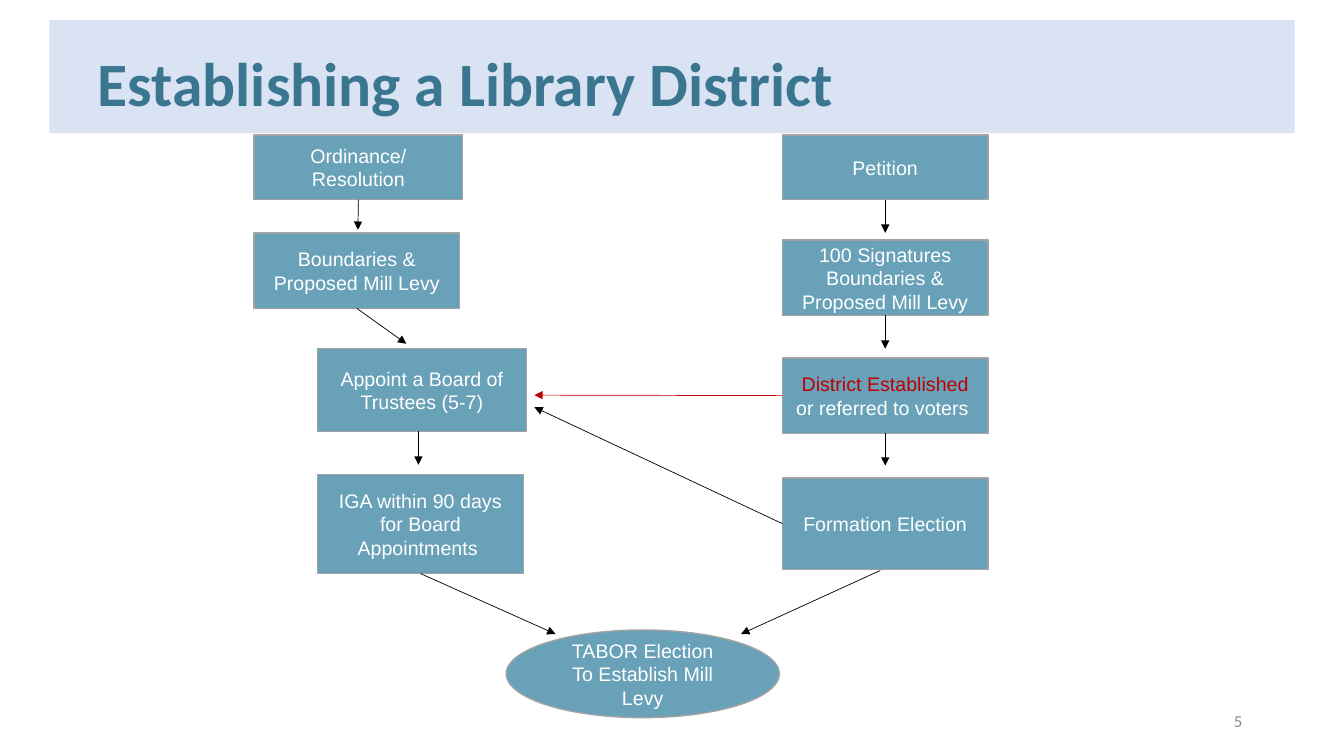
from lxml import etree
from pptx import Presentation
from pptx.dml.color import RGBColor
from pptx.enum.shapes import MSO_CONNECTOR, MSO_SHAPE
from pptx.enum.text import MSO_ANCHOR, MSO_AUTO_SIZE, PP_ALIGN
from pptx.oxml.ns import qn
from pptx.util import Pt

RECT, ELLIPSE = MSO_SHAPE.RECTANGLE, MSO_SHAPE.OVAL
STRAIGHT = MSO_CONNECTOR.STRAIGHT
LEFT, CENTER, RIGHT = PP_ALIGN.LEFT, PP_ALIGN.CENTER, PP_ALIGN.RIGHT
TOP, MIDDLE = MSO_ANCHOR.TOP, MSO_ANCHOR.MIDDLE
GROW = MSO_AUTO_SIZE.SHAPE_TO_FIT_TEXT
LEFT_SIDE, BOTTOM_SIDE = 1, 2
EMU_PER_PX = 9144


def px(*values):
    return [v * EMU_PER_PX for v in values]


def rgb(value):
    return RGBColor.from_string(value)


class Deck:
    heading, body = "Calibri", "Arial"
    band_fill, title_color, number_color = "DAE3F3", "3A768F", "8C8C8C"
    box_fill, box_line, box_text = "68A1B8", "A3A3A3", "FFFFFF"
    black, red = "000000", "C00000"

    def __init__(self, width, height):
        self.prs = Presentation()
        self.prs.slide_width, self.prs.slide_height = px(width, height)
        self.s = self.prs.slides.add_slide(self.prs.slide_layouts[5])

    def add_text(self, sp, paragraphs, font, size, color, align, anchor, bold=False):
        tf = sp.text_frame
        tf.word_wrap = True
        tf.vertical_anchor = anchor
        for i, runs in enumerate(paragraphs):
            p = tf.add_paragraph() if i else tf.paragraphs[0]
            p.alignment = align
            for text, run_color in runs:
                r = p.add_run()
                r.text = text
                r.font.name, r.font.size, r.font.bold = font, Pt(size), bold
                r.font.color.rgb = rgb(run_color or color)

    def title(self, text, *at):
        sp = self.s.shapes.title
        sp.left, sp.top, sp.width, sp.height = px(*at)
        self.add_text(sp, [[(text, None)]], self.heading, 44, self.title_color, LEFT, TOP, True)
        sp.text_frame.auto_size = GROW

    def shape(self, kind, at, fill):
        sp = self.s.shapes.add_shape(kind, *px(*at))
        sp.shadow.inherit = False
        sp.fill.solid()
        sp.fill.fore_color.rgb = rgb(fill)
        return sp

    def band(self, *at):
        sp = self.shape(RECT, at, self.band_fill)
        sp.line.fill.background()
        self.s.shapes.title._element.addprevious(sp._element)

    def number(self, text, *at):
        sp = self.s.shapes.add_textbox(*px(*at))
        self.add_text(sp, [[(text, None)]], self.heading, 12, self.number_color, RIGHT, MIDDLE)

    def box(self, paragraphs, *at, kind=RECT):
        sp = self.shape(kind, at, self.box_fill)
        sp.line.color.rgb = rgb(self.box_line)
        sp.line.width = Pt(1)
        runs = [[(p, None)] if isinstance(p, str) else p for p in paragraphs]
        self.add_text(sp, runs, self.body, 14, self.box_text, CENTER, MIDDLE)
        return sp

    def arrow(self, x1, y1, x2, y2, color=black, source=None, side=BOTTOM_SIDE):
        c = self.s.shapes.add_connector(STRAIGHT, *px(x1, y1, x2, y2))
        if source is not None:
            c.begin_connect(source, side)
        c.line.color.rgb = rgb(color)
        c.line.width = Pt(0.5)
        props = c._element.spPr
        etree.SubElement(props.find(qn("a:ln")), qn("a:tailEnd"), type="triangle")
        etree.SubElement(props, qn("a:effectLst"))


def main():
    deck = Deck(1333, 750)
    deck.band(49, 20, 1235, 112)
    deck.title("Establishing a Library District", 87, 40, 1050, 84)
    deck.number("5", 942, 695, 300, 40)

    deck.box(["TABOR Election", "To Establish Mill Levy"], 502, 625, 271, 87, kind=ELLIPSE)
    levy = ["Boundaries &", "Proposed Mill Levy"]
    ordinance = deck.box(["Ordinance/ Resolution"], 252, 134, 207, 64)
    boundaries = deck.box(levy, 252, 231, 204, 75)
    deck.box(["Appoint a Board of Trustees (5-7)"], 315, 346, 207, 82)
    agreement = deck.box(["IGA within 90 days for Board Appointments "], 315, 471, 204, 98)

    outcome = [("District Established ", deck.red), ("or referred to voters ", None)]
    petition, signatures, district, formation = [
        deck.box(paragraphs, 776, top, 204, height)
        for paragraphs, top, height in [
            (["Petition"], 134, 64),
            (["100 Signatures"] + levy, 238, 75),
            ([outcome], 355, 75),
            (["Formation Election"], 474, 91),
        ]
    ]

    deck.arrow(355, 198, 355, 228, source=ordinance)
    deck.arrow(354, 306, 403, 341, source=boundaries)
    deck.arrow(415, 428, 415, 461)
    deck.arrow(417, 569, 551, 629, source=agreement)
    deck.arrow(878, 198, 878, 231, source=petition)
    deck.arrow(878, 313, 878, 346, source=signatures)
    deck.arrow(878, 430, 878, 462, source=district)
    deck.arrow(873, 566, 735, 629)
    deck.arrow(776, 520, 530, 404, source=formation, side=LEFT_SIDE)
    deck.arrow(776, 392, 530, 392, deck.red, source=district, side=LEFT_SIDE)
    deck.prs.save("out.pptx")


if __name__ == "__main__":
    main()
